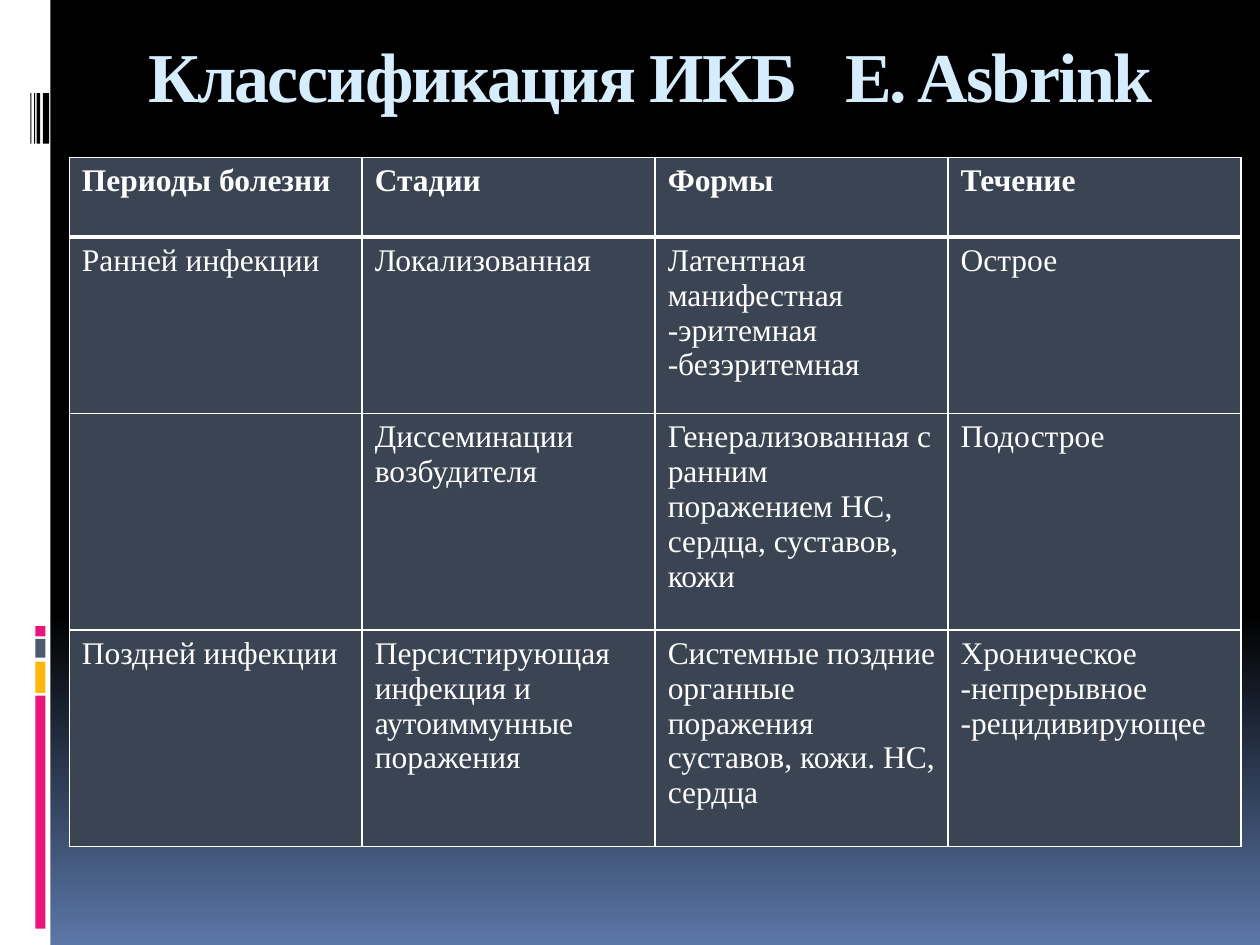
import pptx
import pptx.util
import pptx.dml.color
import pptx.enum.shapes
import pptx.enum.text
import pptx.oxml
import pptx.oxml.ns

Inches, Pt = pptx.util.Inches, pptx.util.Pt

# Content
TITLE = ("Классификация ИКБ", " ", "E. Asbrink")
ROWS = [
    ("Периоды болезни", "Стадии", "Формы", "Течение"),
    ("Ранней инфекции", "Локализованная",
     "Латентная манифестная\n-эритемная\n-безэритемная", "Острое"),
    ("", "Диссеминации возбудителя",
     "Генерализованная с ранним поражением НС, сердца, суставов, кожи",
     "Подострое"),
    ("Поздней инфекции", "Персистирующая инфекция и аутоиммунные поражения",
     "Системные поздние органные поражения суставов, кожи. НС, сердца",
     "Хроническое\n-непрерывное\n-рецидивирующее"),
]
TALL = (0.63, 1.4, 1.72, 1.72)

THEME = {
    "font": "Times New Roman", "head": 40, "body": 18,
    "white": "FFFFFF", "black": "000000", "sky": "D6ECFF", "cell": "3B4453",
    "pink": "EA157A", "gold": "FEB80A", "slate": "4E5B6F", "blue": "5B77A8",
}

# Side trim: (top, height, colour) blocks and (left, width) stripes
BLOCKS = [(5.52, 1.85, "pink"), (5.25, 0.25, "gold"),
          (5.07, 0.15, "slate"), (4.97, 0.08, "pink")]
STRIPES = [(0.34, 0.05), (0.29, 0.03), (0.27, 0.01), (0.24, 0.01)]


def tint(name):
    return pptx.dml.color.RGBColor.from_string(THEME[name])


def style(run, size, color, bold):
    font = run.font
    font.name, font.size, font.bold = THEME["font"], Pt(THEME[size]), bold
    font.color.rgb = tint(color)


def bar(slide, left, top, width, height, color):
    shape = slide.shapes.add_shape(
        pptx.enum.shapes.MSO_SHAPE.RECTANGLE,
        Inches(left), Inches(top), Inches(width), Inches(height))
    shape.shadow.inherit = False
    shape.fill.solid()
    shape.fill.fore_color.rgb = tint(color)
    shape.line.fill.background()


def edge(cell, sides):
    props = cell._tc.get_or_add_tcPr()
    for spot, (side, width) in enumerate(sides.items()):
        line = pptx.oxml.parse_xml(
            f'<a:ln{side} {pptx.oxml.ns.nsdecls("a")} w="{Pt(width)}">'
            f'<a:solidFill><a:srgbClr val="{THEME["white"]}"/></a:solidFill>'
            f'</a:ln{side}>')
        props.insert(spot, line)


def main():
    deck = pptx.Presentation()
    deck.slide_width, deck.slide_height = Inches(10), Inches(7.5)
    slide = deck.slides.add_slide(deck.slide_layouts[6])

    # Background: black down to 65 %, then fading to blue
    back = slide.background.fill
    back.gradient()
    back.gradient_angle = 270
    for stop, spot, color in zip(back.gradient_stops, (0.65, 1), ("black", "blue")):
        stop.position, stop.color.rgb = spot, tint(color)

    # Side trim
    bar(slide, 0, 0, 0.4, 7.5, "white")
    for top, height, color in BLOCKS:
        bar(slide, 0.28, top, 0.08, height, color)
    for left, width in STRIPES:
        bar(slide, left, 0.74, width, 0.4, "black")

    # Title, with a wide gap before the author
    box = slide.shapes.add_textbox(Inches(0.47), Inches(0.16), Inches(9.38), Inches(6.95))
    frame = box.text_frame
    frame.word_wrap = True
    frame.margin_top = Inches(0.1)
    frame.vertical_anchor = pptx.enum.text.MSO_ANCHOR.TOP
    para = frame.paragraphs[0]
    para.alignment = pptx.enum.text.PP_ALIGN.CENTER
    for text, space in zip(TITLE, (-100, 1700, -100)):
        run = para.add_run()
        run.text = text
        style(run, "head", "sky", True)
        run.font._element.set("spc", str(space))

    # Table
    count = len(ROWS[0])
    table = slide.shapes.add_table(
        len(ROWS), count, Inches(0.55), Inches(1.25),
        Inches(9.3), Inches(sum(TALL))).table
    for col in table.columns:
        col.width = Inches(9.3 / count)
    for y, (texts, tall) in enumerate(zip(ROWS, TALL)):
        table.rows[y].height = Inches(tall)
        for x, text in enumerate(texts):
            cell = table.cell(y, x)
            cell.fill.solid()
            cell.fill.fore_color.rgb = tint("cell")
            edge(cell, {"L": 1, "R": 1, "T": 3 if y == 1 else 1,
                        "B": 3 if y == 0 else 1})
            cell.text_frame.text = text
            for para in cell.text_frame.paragraphs:
                for run in para.runs:
                    style(run, "body", "white", y == 0)

    deck.save("out.pptx")


if __name__ == "__main__":
    main()
